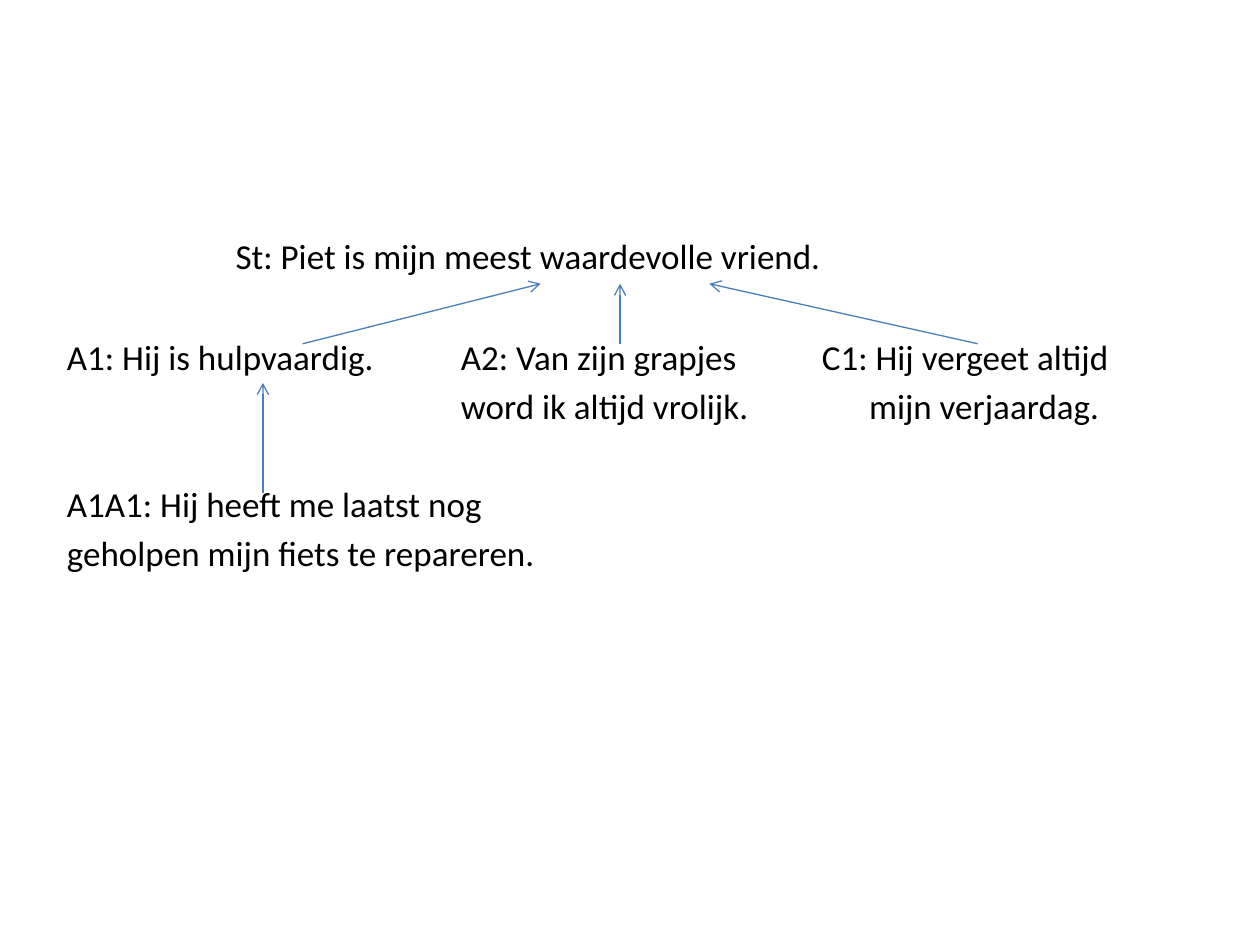
from lxml import etree
from pptx import Presentation
from pptx.dml.color import RGBColor
from pptx.enum.shapes import MSO_CONNECTOR
from pptx.oxml.ns import qn
from pptx.util import Cm, Pt

STRAIGHT = MSO_CONNECTOR.STRAIGHT
COLORS = {"text": "000000", "arrow": "4B7EBC"}

prs = Presentation()
prs.slide_width, prs.slide_height = Cm(25.4), Cm(19.05)
s = prs.slides.add_slide(prs.slide_layouts[6])

# Statements: left, top, width (cm), lines, indent of later lines (cm)
statements = [
    (4.75, 4.72, 14, ["St: Piet is mijn meest waardevolle vriend."], 0),
    (1.35, 6.76, 7, ["A1: Hij is hulpvaardig."], 0),
    (9.29, 6.76, 7, ["A2: Van zijn grapjes", "word ik altijd vrolijk."], 0),
    (16.57, 6.76, 7, ["C1: Hij vergeet altijd", "mijn verjaardag."], 0.95),
    (1.35, 9.72, 12, ["A1A1: Hij heeft me laatst nog",
                      "geholpen mijn fiets te repareren."], 0),
]
frame_format = {"word_wrap": True, "margin_left": 0, "margin_top": 0,
                "margin_right": 0, "margin_bottom": 0}
font_format = {"name": "Calibri", "size": Pt(20)}

for left, top, width, lines, indent in statements:
    sp = s.shapes.add_textbox(Cm(left), Cm(top), Cm(width), Cm(len(lines)))
    tf = sp.text_frame
    for name, value in frame_format.items():
        setattr(tf, name, value)
    for i, text in enumerate(lines):
        p = tf.add_paragraph() if i else tf.paragraphs[0]
        if i:
            p.space_before = Pt(4)
            p._p.get_or_add_pPr().set("marL", str(int(Cm(indent))))
        r = p.add_run()
        r.text = text
        for name, value in font_format.items():
            setattr(r.font, name, value)
        r.font.color.rgb = RGBColor.from_string(COLORS["text"])

# Support arrows: from x, y to x, y (cm)
arrows = [
    (6.1, 6.93, 10.9, 5.72),
    (12.5, 6.93, 12.5, 5.72),
    (19.71, 6.93, 14.3, 5.72),
    (5.3, 9.93, 5.3, 7.72),
]
for points in arrows:
    arrow = s.shapes.add_connector(STRAIGHT, *[Cm(v) for v in points])
    arrow.line.width = Pt(0.75)
    arrow.line.color.rgb = RGBColor.from_string(COLORS["arrow"])
    etree.SubElement(arrow.line._get_or_add_ln(), qn("a:tailEnd"), type="arrow")
    etree.SubElement(arrow._element.spPr, qn("a:effectLst"))

prs.save("out.pptx")
